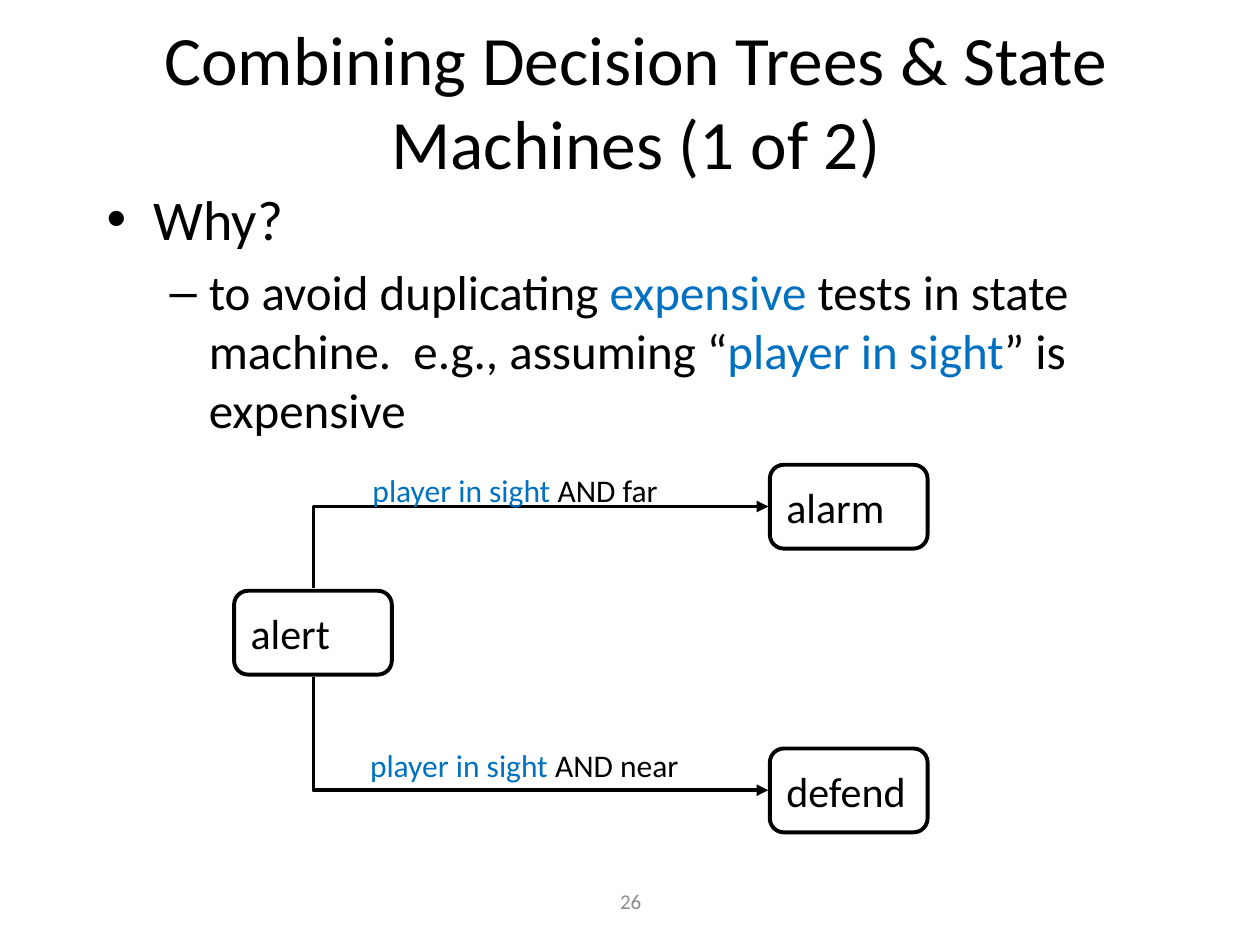
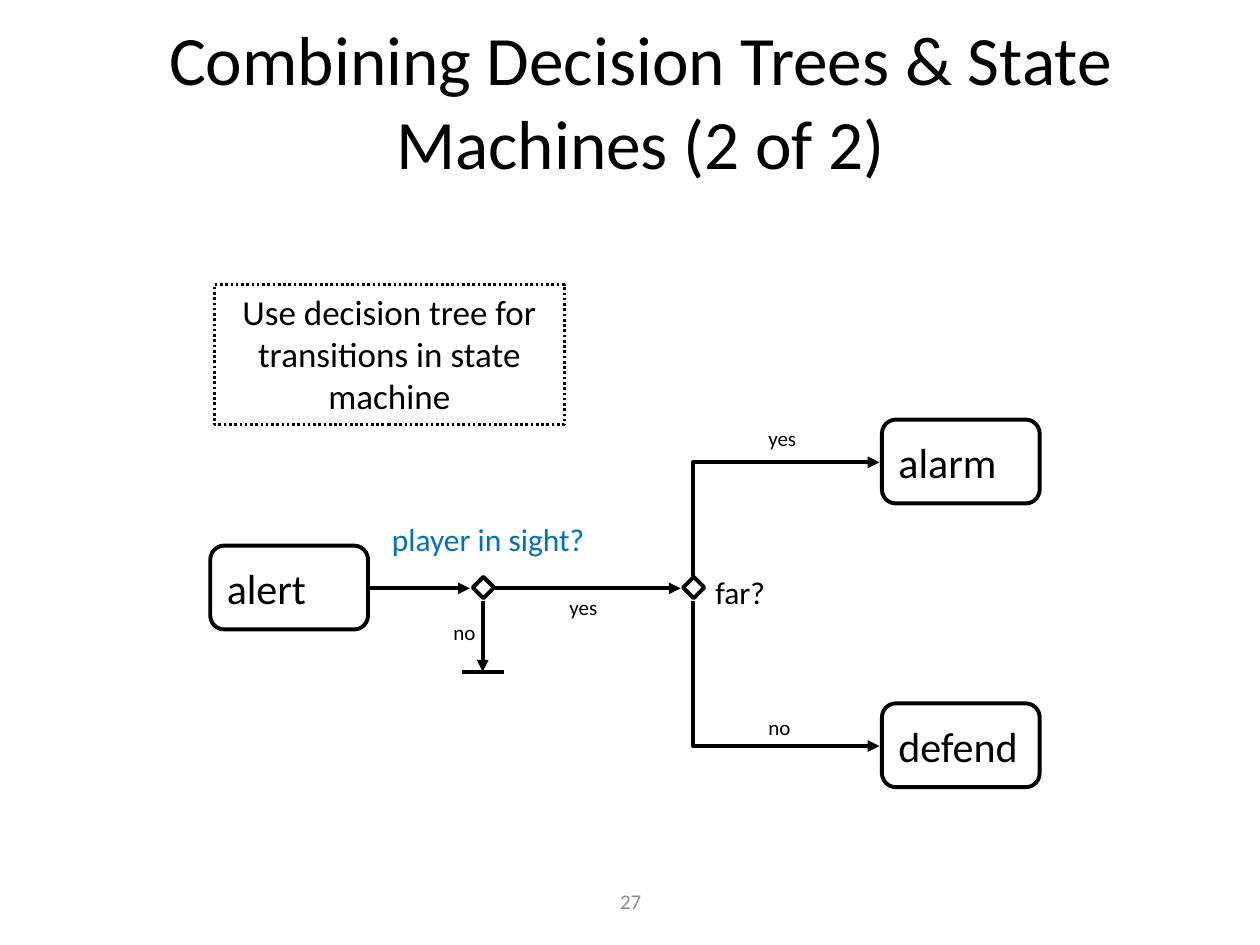
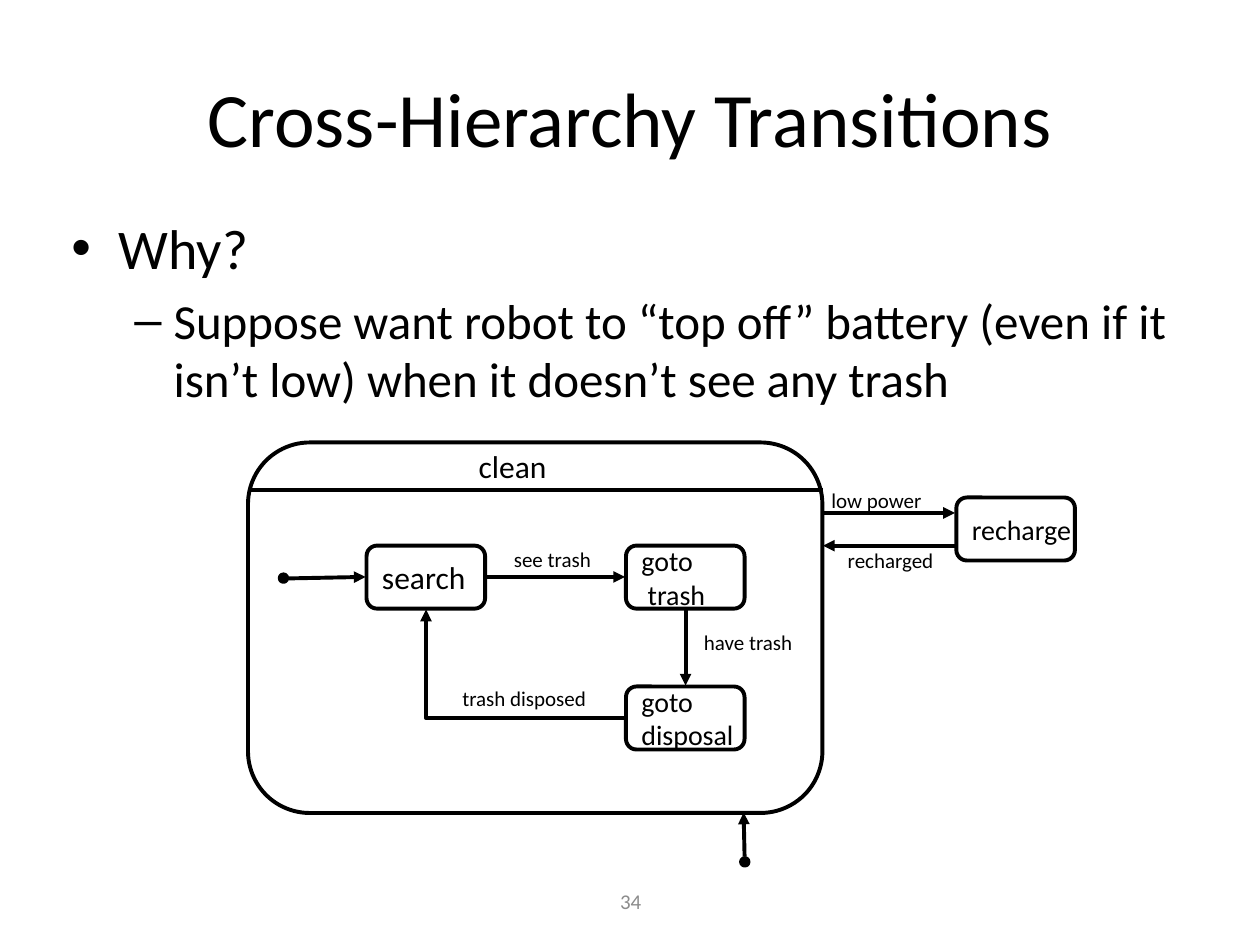
from dataclasses import dataclass

from pptx import Presentation
from pptx.dml.color import RGBColor
from pptx.enum.dml import MSO_LINE
from pptx.enum.shapes import MSO_CONNECTOR, MSO_SHAPE
from pptx.enum.text import MSO_ANCHOR, MSO_AUTO_SIZE, PP_ALIGN
from pptx.oxml.ns import qn
from pptx.oxml.xmlchemy import OxmlElement
from pptx.util import Cm, Pt

ROUND, DIAMOND = MSO_SHAPE.ROUNDED_RECTANGLE, MSO_SHAPE.FLOWCHART_DECISION
RECT, OVAL = MSO_SHAPE.RECTANGLE, MSO_SHAPE.OVAL
STRAIGHT, ELBOW = MSO_CONNECTOR.STRAIGHT, MSO_CONNECTOR.ELBOW
LEFT, CENTER = PP_ALIGN.LEFT, PP_ALIGN.CENTER
TOP, MIDDLE = MSO_ANCHOR.TOP, MSO_ANCHOR.MIDDLE
FIXED, GROW = MSO_AUTO_SIZE.NONE, MSO_AUTO_SIZE.SHAPE_TO_FIT_TEXT
DOTS = MSO_LINE.ROUND_DOT

FONT = "Calibri"
BLACK, BLUE, GRAY = "000000", "0070C0", "8C8C8C"
STROKE = 2.25
TITLE_ONLY = 5


@dataclass
class Box:
    left: float
    top: float
    width: float
    height: float

    def spans(self) -> list:
        return [Cm(v) for v in (self.left, self.top, self.width, self.height)]


@dataclass
class Label:
    text: str
    left: float
    top: float
    width: float
    size: float = 12


@dataclass
class Arrow:
    """A line with its head at "tailEnd" (finish), "headEnd" (start) or nowhere."""
    x1: float
    y1: float
    x2: float
    y2: float
    end: str = "tailEnd"


@dataclass
class Level:
    mark: str
    size: float
    margin: float
    hang: float


LEVELS = (Level("•", 32, 0.95, 0.95), Level("–", 28, 2.06, 0.79))
STATE = (3.18, 1.69)
STEP = (2.39, 1.27)


def ink(hue: str) -> RGBColor:
    return RGBColor.from_string(hue)


def put(frame, text: str, size: float = 24, hue: str = BLACK, align=LEFT,
        anchor=MIDDLE, wrap: bool = True, fit=FIXED) -> None:
    """Fill a frame: each line is a paragraph, words between asterisks are blue."""
    frame.auto_size = fit
    frame.word_wrap = wrap
    frame.vertical_anchor = anchor
    for row, line in enumerate(text.split("\n")):
        para = frame.add_paragraph() if row else frame.paragraphs[0]
        para.alignment = align
        for turn, part in enumerate(line.split("*")):
            if part:
                run = para.add_run()
                run.text = part
                run.font.name, run.font.size = FONT, Pt(size)
                run.font.color.rgb = ink(BLUE if turn % 2 else hue)


def write(slide, box: Box, text: str, **style) -> None:
    put(slide.shapes.add_textbox(*box.spans()).text_frame, text, **style)


def label(slide, item: Label) -> None:
    height = 1.02 if item.size > 12 else 0.76
    write(slide, Box(item.left, item.top, item.width, height), item.text,
          size=item.size, wrap=False, fit=GROW)


def draw(slide, kind, box: Box, fill: str = "", width: float = STROKE):
    shape = slide.shapes.add_shape(kind, *box.spans())
    shape.shadow.inherit = False
    if fill:
        shape.fill.solid()
        shape.fill.fore_color.rgb = ink(fill)
    else:
        shape.fill.background()
    shape.line.color.rgb = ink(BLACK)
    shape.line.width = Pt(width)
    return shape


def node(slide, text: str, left: float, top: float, size: float = 24,
         span: tuple[float, float] = STATE) -> None:
    shape = draw(slide, ROUND, Box(left, top, *span))
    put(shape.text_frame, text, size=size, wrap=False)


def finish(line, end: str) -> None:
    """Give a connector its stroke and arrowhead."""
    line.line.color.rgb = ink(BLACK)
    line.line.width = Pt(STROKE)
    props = line.element.spPr
    if end:
        head = OxmlElement(f"a:{end}")
        head.set("type", "triangle")
        props.find(qn("a:ln")).append(head)
    props.append(OxmlElement("a:effectLst"))


def link(slide, arrow: Arrow) -> None:
    ends = (Cm(v) for v in (arrow.x1, arrow.y1, arrow.x2, arrow.y2))
    finish(slide.shapes.add_connector(STRAIGHT, *ends), arrow.end)


def bend(slide, arrow: Arrow) -> None:
    """Draw a one-corner arrow: up or down first, then right."""
    # The preset runs right, then down; a quarter turn back makes it up, then right.
    rise, run = arrow.y2 - arrow.y1, arrow.x2 - arrow.x1
    midx, midy = (arrow.x1 + arrow.x2) / 2, (arrow.y1 + arrow.y2) / 2
    ends = (midx + rise / 2, midy - run / 2, midx - rise / 2, midy + run / 2)
    line = slide.shapes.add_connector(ELBOW, *(Cm(v) for v in ends))
    props = line.element.spPr
    props.find(qn("a:xfrm")).set("rot", "16200000")
    props.find(qn("a:prstGeom")).set("prst", "bentConnector2")
    finish(line, arrow.end)


def start(deck, title: str, page: int, box: Box, size: float = 39.6):
    """Add a slide with its title and page number."""
    slide = deck.slides.add_slide(deck.slide_layouts[TITLE_ONLY])
    head = slide.shapes.title
    head.left, head.top, head.width, head.height = box.spans()
    put(head.text_frame, title, size=size, align=CENTER)
    write(slide, Box(8.69, 17.65, 8.05, 1.02), str(page),
          size=12, hue=GRAY, align=CENTER)
    return slide


def points(slide, box: Box, text: str) -> None:
    """Write bulleted text, one level deeper on each line."""
    shape = slide.shapes.add_textbox(*box.spans())
    put(shape.text_frame, text, anchor=TOP)
    for depth, (para, level) in enumerate(zip(shape.text_frame.paragraphs, LEVELS)):
        para.level = depth
        para.space_before = Pt(level.size * 0.2)
        for run in para.runs:
            run.font.size = Pt(level.size)
        props = para._p.get_or_add_pPr()
        props.set("marL", str(Cm(level.margin)))
        props.set("indent", str(-Cm(level.hang)))
        face, mark = OxmlElement("a:buFont"), OxmlElement("a:buChar")
        face.set("typeface", "Arial")
        mark.set("char", level.mark)
        props.extend((face, mark))


def states(slide, left: float, top: float, right: float) -> None:
    """Draw alert at the left, with alarm above and defend below at the right."""
    node(slide, "alert", left, top)
    node(slide, "defend", right, top + 3.18)
    node(slide, "alarm", right, top - 2.54)


def machine(deck) -> None:
    slide = start(deck, "Combining Decision Trees & State Machines (1 of 2)", 26,
                  Box(1.07, 0.84, 23.5, 2.34))
    points(slide, Box(1.9, 3.6, 21.59, 12.7),
           "Why?\nto avoid duplicating *expensive *tests in state machine.  "
           "e.g., assuming “*player in sight*” is expensive")
    states(slide, 4.72, 11.91, 15.52)
    bend(slide, Arrow(6.32, 13.64, 15.49, 15.93))
    bend(slide, Arrow(6.32, 11.86, 15.49, 10.21))
    label(slide, Label("*player in sight *AND far", 7.26, 9.37, 6.32, 18))
    label(slide, Label("*player in sight *AND near", 7.21, 14.91, 6.81, 18))


def tree(deck) -> None:
    slide = start(deck, "Combining Decision Trees & State Machines (2 of 2)", 27,
                  Box(1.27, 0.84, 23.29, 2.34))
    states(slide, 4.24, 11, 17.78)
    for left in (9.53, 13.77):
        draw(slide, DIAMOND, Box(left, 11.63, 0.43, 0.43))
    for arrow in (Arrow(7.44, 11.86, 9.47, 11.86),
                  Arrow(9.98, 11.86, 13.72, 11.86),
                  Arrow(9.73, 12.12, 9.73, 13.54),
                  Arrow(9.32, 13.54, 10.16, 13.54, end="")):
        link(slide, arrow)
    bend(slide, Arrow(13.97, 11.61, 17.73, 9.32))
    bend(slide, Arrow(13.97, 12.12, 17.73, 15.04))
    for item in (Label("*player in sight?*", 7.65, 10.36, 4.45, 18),
                 Label("far?", 14.17, 11.43, 1.6, 18),
                 Label("yes", 15.24, 8.46, 1.17),
                 Label("yes", 11.23, 11.86, 1.17),
                 Label("no", 15.24, 14.27, 0.99),
                 Label("no", 8.89, 12.37, 0.99)):
        label(slide, item)
    note = draw(slide, RECT, Box(4.32, 5.74, 7.06, 2.82), width=1.5)
    note.line.dash_style = DOTS
    put(note.text_frame, "Use decision tree for transitions in state machine",
        size=20, align=CENTER, anchor=TOP, fit=GROW)


def robot(deck) -> None:
    slide = start(deck, "Cross-Hierarchy Transitions", 34,
                  Box(1.27, 0.76, 22.86, 3.18), size=44)
    points(slide, Box(1.19, 4.17, 22.86, 12.57),
           "Why?\nSuppose want robot to “top off” battery (even if it isn’t low) "
           "when it doesn’t see any trash")
    draw(slide, ROUND, Box(5, 8.92, 11.58, 7.47))
    node(slide, "search", 7.39, 11, 18, STEP)
    node(slide, "goto\ndisposal", 12.62, 13.84, 16, STEP)
    node(slide, "goto\n trash", 12.62, 11, 16, STEP)
    node(slide, "recharge", 19.28, 10.03, 16, STEP)
    for left, top in ((5.64, 11.58), (14.94, 17.3)):
        draw(slide, OVAL, Box(left, top, 0.15, 0.15), fill=BLACK)
    bend(slide, Arrow(8.59, 12.29, 12.6, 14.48, end="headEnd"))
    for arrow in (Arrow(5, 9.88, 16.59, 9.88, end=""),
                  Arrow(9.8, 11.63, 12.6, 11.63),
                  Arrow(13.82, 12.29, 13.82, 13.82),
                  Arrow(5.82, 11.66, 7.37, 11.63),
                  Arrow(15.01, 17.27, 14.99, 16.38),
                  Arrow(16.59, 10.34, 19.25, 10.34),
                  Arrow(19.25, 11, 16.59, 11)):
        link(slide, arrow)
    for item in (Label("clean", 9.4, 8.89, 2.03, 18),
                 Label("see trash", 10.11, 10.9, 2.26),
                 Label("trash disposed", 9.07, 13.69, 3.25),
                 Label("have trash", 13.94, 12.57, 2.49),
                 Label("low power", 16.51, 9.7, 2.41),
                 Label("recharged", 16.84, 10.92, 2.41)):
        label(slide, item)


def main() -> None:
    deck = Presentation()
    deck.slide_width, deck.slide_height = Cm(25.4), Cm(19.05)
    for build in (machine, tree, robot):
        build(deck)
    deck.save("out.pptx")


if __name__ == "__main__":
    main()
